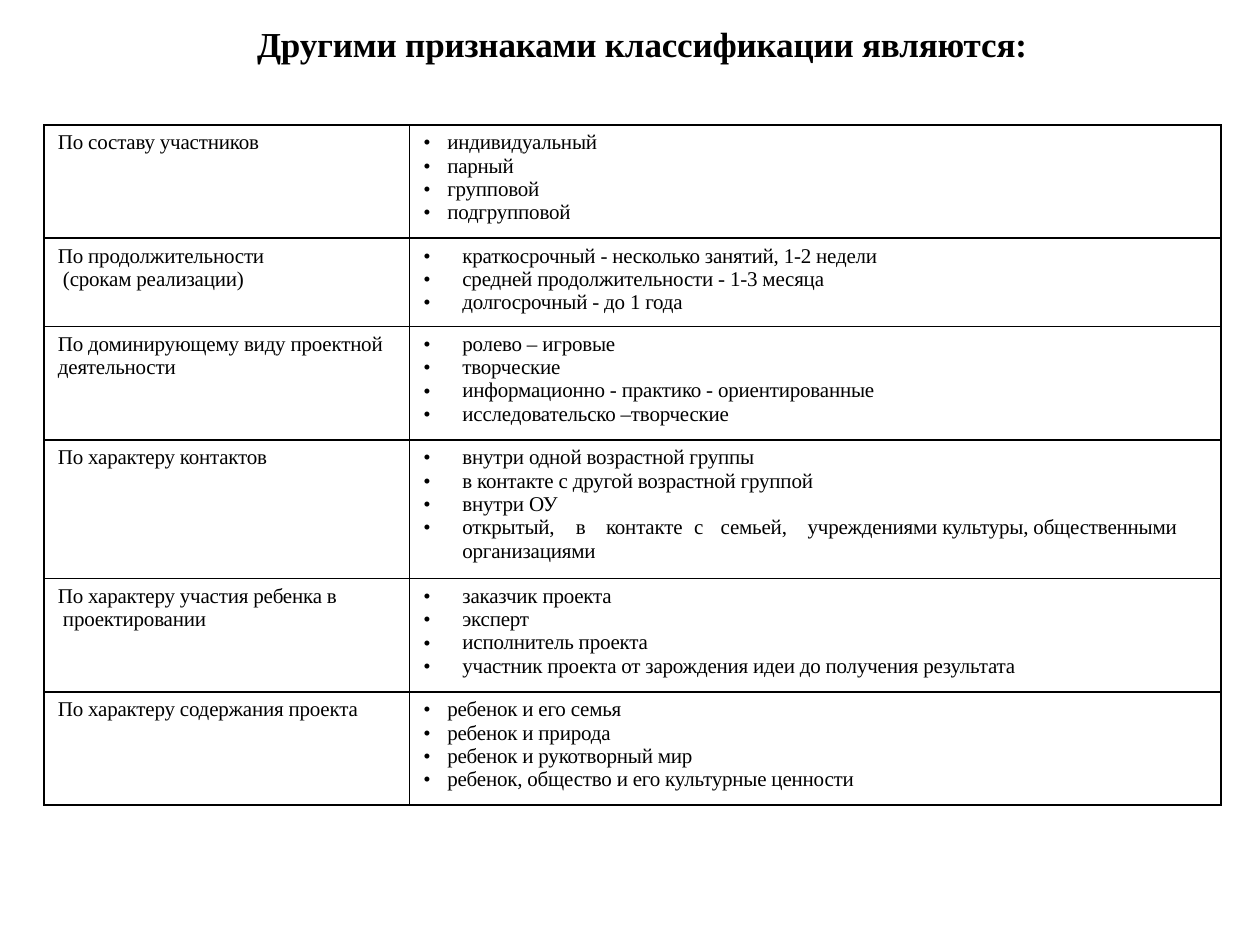
from lxml.etree import SubElement as Sub
from pptx import Presentation
from pptx.dml.color import RGBColor as Rgb
from pptx.oxml import parse_xml
from pptx.oxml.ns import nsdecls, qn
from pptx.util import Inches, Pt

TITLE = "Другими признаками классификации являются:"

# label, indent style, row height, items
ROWS = [
    ("По составу участников", "near", 0.9,
     ["индивидуальный", "парный", "групповой", "подгрупповой"]),
    ("По продолжительности\v (срокам реализации)", "far", 0.7,
     ["краткосрочный - несколько занятий, 1-2 недели",
      "средней продолжительности - 1-3 месяца",
      "долгосрочный - до 1 года"]),
    ("По доминирующему виду проектной деятельности", "far", 0.9,
     ["ролево – игровые", "творческие",
      "информационно - практико - ориентированные",
      "исследовательско –творческие"]),
    ("По характеру контактов", "far", 1.1,
     ["внутри одной возрастной группы",
      "в контакте с другой возрастной группой",
      "внутри ОУ",
      "открытый,\tв\tконтакте\tс\tсемьей,\tучреждениями культуры, "
      "общественными организациями"]),
    ("По характеру участия ребенка в\v проектировании", "far", 0.9,
     ["заказчик проекта", "эксперт", "исполнитель проекта",
      "участник проекта от зарождения идеи до получения результата"]),
    ("По характеру содержания проекта", "near", 0.9,
     ["ребенок и его семья", "ребенок и природа",
      "ребенок и рукотворный мир",
      "ребенок, общество и его культурные ценности"]),
]

THEME = {
    "ink": "000000",
    "track": "-10",
    "title": {"name": "Times New Roman", "size": Pt(20), "bold": True},
    "body": {"name": "Times New Roman", "size": Pt(12), "bold": False},
}
COLS = (2.9, 6.44)
PAD = 0.11
INDENT = {"near": 0.3, "far": 0.42}
STOPS = (1.32, 1.56, 2.26, 2.47, 3.16)


def write(para, text, style):
    para.text = text
    for run in para.runs:
        for key, val in THEME[style].items():
            setattr(run.font, key, val)
        run.font.color.rgb = Rgb.from_string(THEME["ink"])
        run._r.get_or_add_rPr().set("spc", THEME["track"])


def indent(para, left, hang=0):
    props = para._p.get_or_add_pPr()
    props.set("marL", str(Inches(left)))
    props.set("indent", str(-Inches(hang)))
    return props


def bullet(para, text, left):
    props = indent(para, left, left - PAD)
    Sub(props, qn("a:buFont"), typeface="Times New Roman")
    Sub(props, qn("a:buChar"), char="•")
    tabs = Sub(props, qn("a:tabLst"))
    for stop in (left,) + (STOPS if "\t" in text else ()):
        Sub(tabs, qn("a:tab"), pos=str(Inches(stop)), algn="l")
    write(para, text, "body")


def frame(cell):
    """Clear the fill, set the insets and draw all four borders."""
    cell.fill.background()
    insets = {"margin_left": 0, "margin_right": 0,
              "margin_top": 0.05, "margin_bottom": 0}
    for key, val in insets.items():
        setattr(cell, key, Inches(val))
    props = cell._tc.get_or_add_tcPr()
    for spot, side in enumerate("LRTB"):
        props.insert(spot, parse_xml(
            f'<a:ln{side} {nsdecls("a")} w="{Pt(1)}"><a:solidFill>'
            f'<a:srgbClr val="{THEME["ink"]}"/></a:solidFill></a:ln{side}>'))


def head(slide):
    box = slide.shapes.add_textbox(
        Inches(2.03), Inches(0.17), Inches(6.18), Inches(0.36))
    text = box.text_frame
    text.word_wrap = True
    insets = {"left": 0.01, "right": 0, "top": 0.01, "bottom": 0}
    for side, val in insets.items():
        setattr(text, f"margin_{side}", Inches(val))
    write(text.paragraphs[0], TITLE, "title")


def grid(slide):
    high = sum(row[2] for row in ROWS)
    table = slide.shapes.add_table(
        len(ROWS), len(COLS), Inches(0.35), Inches(0.99),
        Inches(sum(COLS)), Inches(high)).table
    table.first_row = table.horz_banding = False
    for col, wide in zip(table.columns, COLS):
        col.width = Inches(wide)
    for row, (label, style, tall, items) in zip(table.rows, ROWS):
        row.height = Inches(tall)
        left, right = row.cells
        for cell in (left, right):
            frame(cell)
        para = left.text_frame.paragraphs[0]
        indent(para, PAD)
        write(para, label, "body")
        text = right.text_frame
        for num, item in enumerate(items):
            para = text.add_paragraph() if num else text.paragraphs[0]
            bullet(para, item, INDENT[style])


def main():
    deck = Presentation()
    deck.slide_width, deck.slide_height = Inches(10), Inches(7.5)
    slide = deck.slides.add_slide(deck.slide_layouts[6])
    head(slide)
    grid(slide)
    deck.save("out.pptx")


if __name__ == "__main__":
    main()
